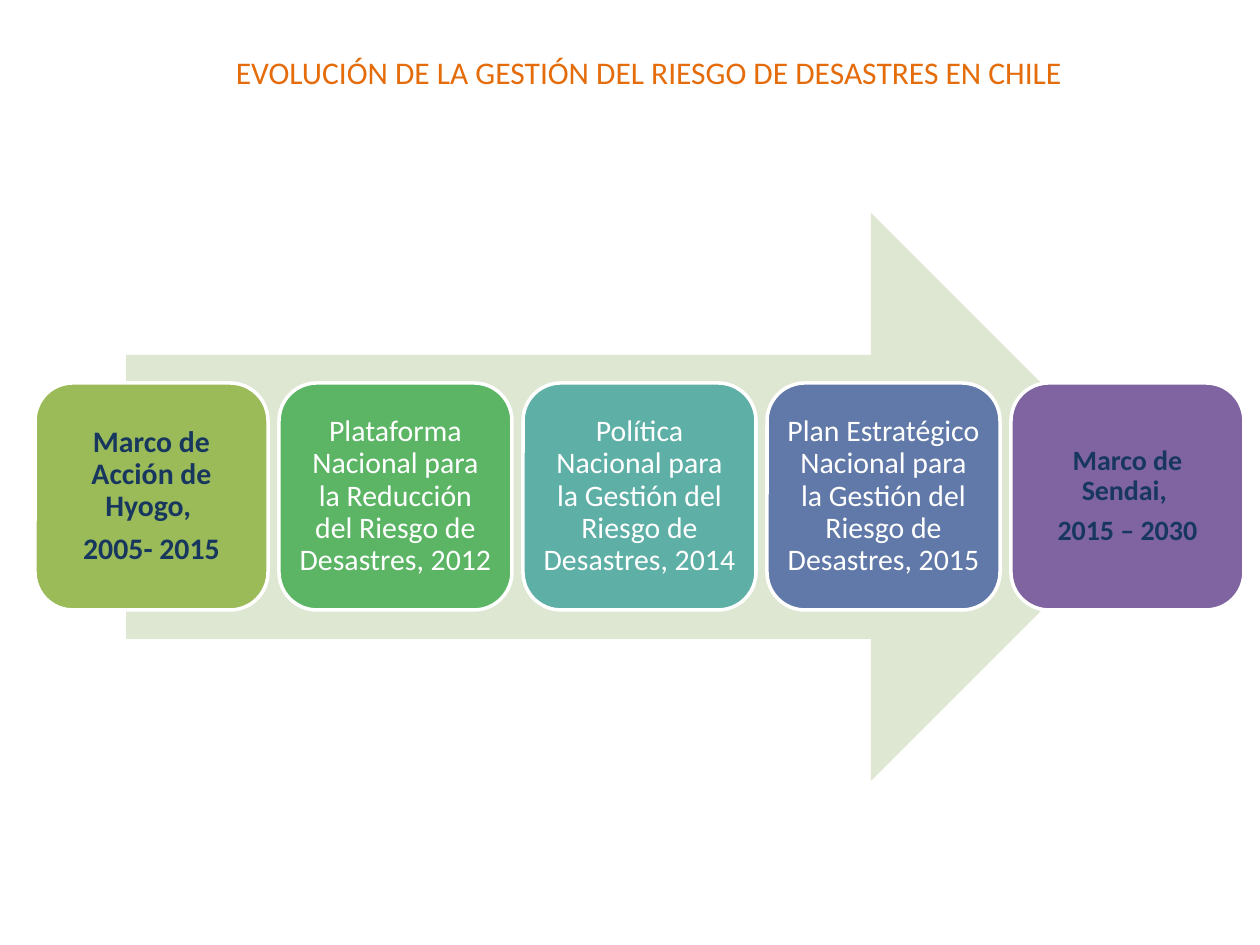
import dataclasses

import pptx
import pptx.dml.color
import pptx.enum.shapes
import pptx.enum.text
import pptx.util

SCALE = 914400 / 126  # EMU per px


@dataclasses.dataclass(frozen=True)
class Theme:
    font: str = "Calibri"
    title: str = "E46C0A"
    arrow: str = "DEE7D1"
    edge: str = "FFFFFF"
    light: str = "FFFFFF"
    dark: str = "17375E"
    head: int = 18
    body: int = 17
    small: int = 16
    gap: int = 6


@dataclasses.dataclass(frozen=True)
class Box:
    left: int
    top: int
    width: int
    height: int


@dataclasses.dataclass(frozen=True)
class Card:
    lines: tuple[str, ...]
    fill: str
    color: str
    size: int
    bold: bool = False


THEME = Theme()
SHAPE = pptx.enum.shapes.MSO_SHAPE

CARDS = (
    Card(("Marco de Acción de Hyogo, ", "2005- 2015"),
         "9BBB59", THEME.dark, THEME.body, True),
    Card(("Plataforma Nacional para la Reducción del Riesgo de Desastres, 2012",),
         "5CB565", THEME.light, THEME.body),
    Card(("Política Nacional para la Gestión del Riesgo de Desastres, 2014",),
         "5EAFA6", THEME.light, THEME.body),
    Card(("Plan Estratégico Nacional para la Gestión del Riesgo de Desastres, 2015",),
         "6179A8", THEME.light, THEME.body),
    Card(("Marco de Sendai, ", "2015 – 2030"),
         "8064A2", THEME.dark, THEME.small, True),
)
FIRST = Box(35, 383, 233, 227)
STEP = 244


def px(value: int) -> pptx.util.Emu:
    return pptx.util.Emu(round(value * SCALE))


def rgb(code: str) -> pptx.dml.color.RGBColor:
    return pptx.dml.color.RGBColor.from_string(code)


def place(box: Box) -> tuple:
    return tuple(px(side) for side in dataclasses.astuple(box))


def write(shape, *lines: str, size: int, color: str, bold: bool = False,
          inset: int = 9, space: float = 1.0) -> None:
    frame = shape.text_frame
    frame.word_wrap = True
    frame.auto_size = pptx.enum.text.MSO_AUTO_SIZE.NONE
    frame.vertical_anchor = pptx.enum.text.MSO_ANCHOR.MIDDLE
    frame.margin_left = frame.margin_right = px(inset)
    frame.margin_top = frame.margin_bottom = px(inset)
    for i, line in enumerate(lines):
        para = frame.add_paragraph() if i else frame.paragraphs[0]
        para.alignment = pptx.enum.text.PP_ALIGN.CENTER
        para.line_spacing = space
        if i < len(lines) - 1:
            para.space_after = pptx.util.Pt(THEME.gap)
        run = para.add_run()
        run.text = line
        run.font.name = THEME.font
        run.font.size = pptx.util.Pt(size)
        run.font.bold = bold
        run.font.color.rgb = rgb(color)


def draw(slide, kind, box: Box, fill: str, edge: str | None = None):
    shape = slide.shapes.add_shape(kind, *place(box))
    shape.shadow.inherit = False
    shape.fill.solid()
    shape.fill.fore_color.rgb = rgb(fill)
    if edge:
        shape.line.color.rgb = rgb(edge)
        shape.line.width = pptx.util.Pt(2)
    else:
        shape.line.fill.background()
    return shape


def main() -> None:
    deck = pptx.Presentation()
    deck.slide_width, deck.slide_height = px(1260), px(945)
    slide = deck.slides.add_slide(deck.slide_layouts[6])

    # Title
    title = slide.shapes.add_textbox(*place(Box(82, 28, 1134, 87)))
    write(title, "EVOLUCIÓN DE LA GESTIÓN DEL RIESGO DE DESASTRES EN CHILE",
          size=THEME.head, color=THEME.title)

    # Arrow behind the cards
    draw(slide, SHAPE.RIGHT_ARROW, Box(126, 213, 1029, 568), THEME.arrow)

    # One card per milestone, at equal steps
    for i, card in enumerate(CARDS):
        box = dataclasses.replace(FIRST, left=FIRST.left + i * STEP)
        shape = draw(slide, SHAPE.ROUNDED_RECTANGLE, box, card.fill, THEME.edge)
        write(shape, *card.lines, size=card.size, color=card.color,
              bold=card.bold, space=0.9)

    deck.save("out.pptx")


if __name__ == "__main__":
    main()
